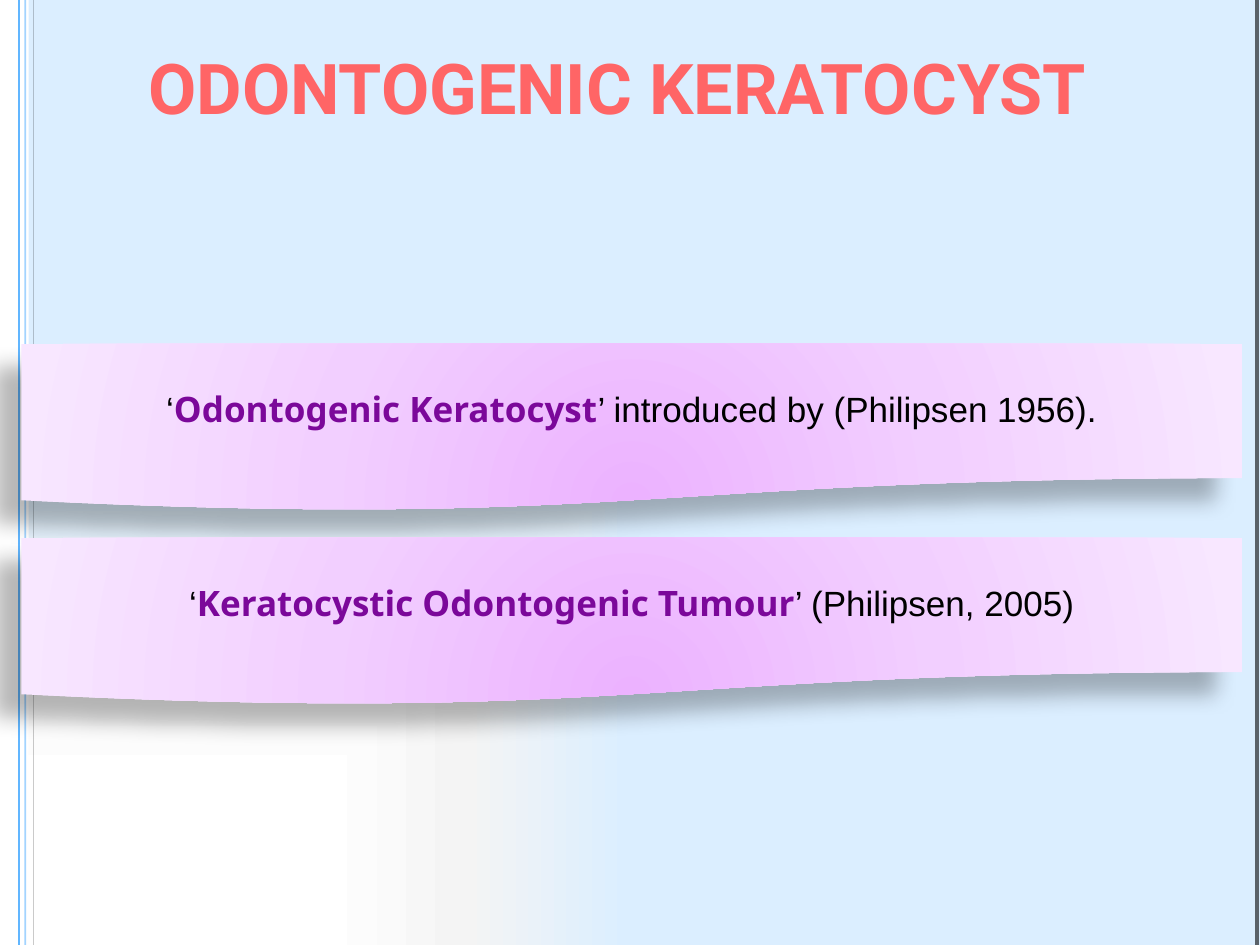
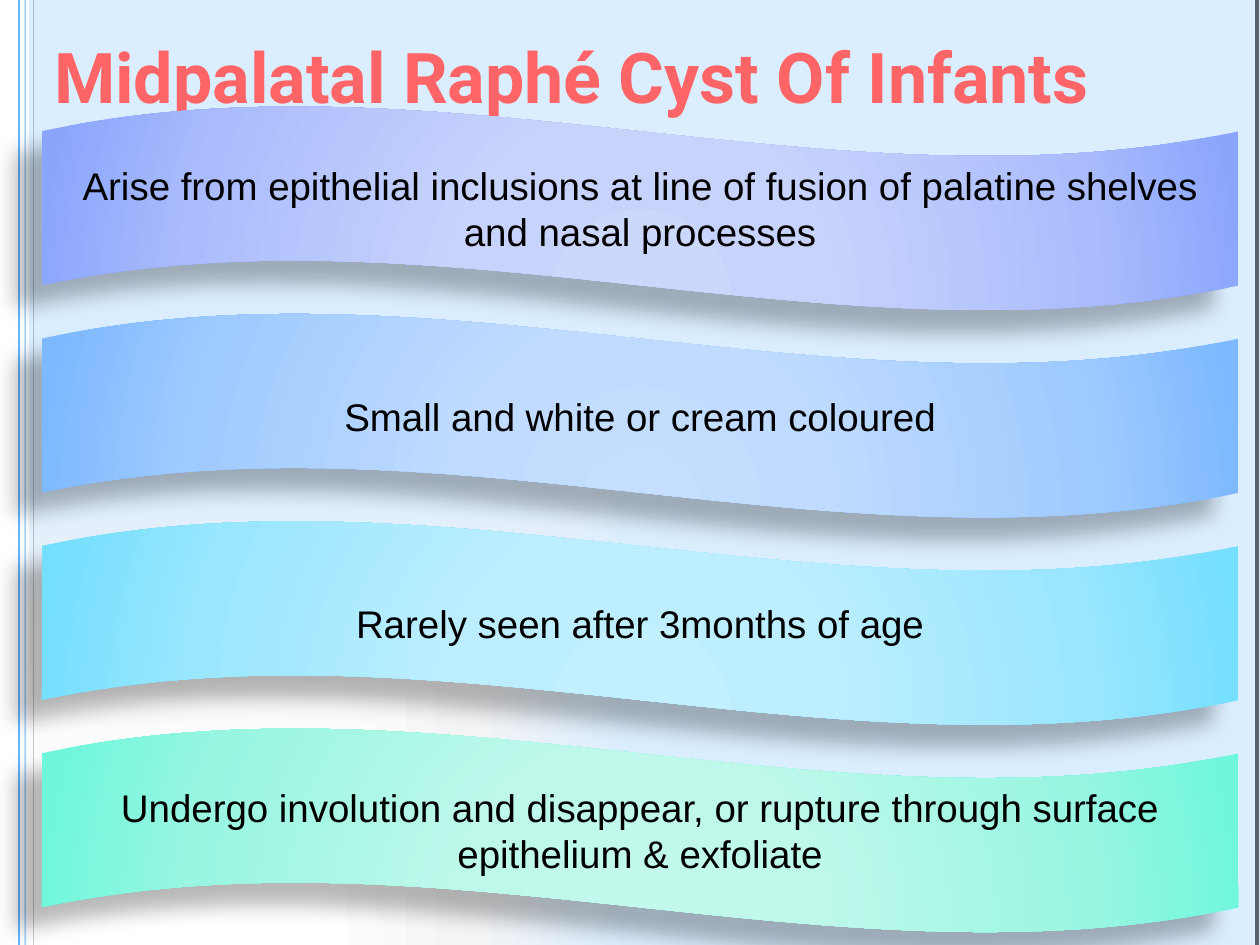
"""Build two slides on jaw cysts, with ribbon bands on a shared layout."""
from dataclasses import dataclass

from lxml import etree
from pptx import Presentation
from pptx.dml.color import RGBColor
from pptx.enum.shapes import MSO_CONNECTOR, MSO_SHAPE
from pptx.enum.text import MSO_ANCHOR, MSO_AUTO_SIZE, PP_ALIGN
from pptx.oxml.ns import qn
from pptx.slide import Slide, SlideLayout
from pptx.util import Cm, Pt

RECT = MSO_SHAPE.RECTANGLE
SCROLL = MSO_SHAPE.FLOWCHART_DOCUMENT
WAVE = MSO_SHAPE.WAVE
LINE = MSO_CONNECTOR.STRAIGHT
TOP, MIDDLE = MSO_ANCHOR.TOP, MSO_ANCHOR.MIDDLE
LEFT, CENTER = PP_ALIGN.LEFT, PP_ALIGN.CENTER
FIXED = MSO_AUTO_SIZE.NONE

Stops = tuple[tuple[int, str], ...]
Sides = tuple[int, int, int, int]


@dataclass(frozen=True)
class Theme:
    """Hold the colours, fonts and type sizes of the deck."""
    white: str = "FFFFFF"
    black: str = "000000"
    blue: str = "61B6FF"
    coral: str = "FF6566"
    plum: str = "7B089A"
    head: str = "Roboto"
    body: str = "Arial"
    bold: str = "Noto Sans"
    large: float = 40
    medium: float = 22
    small: float = 20
    back: Stops = ((34, "FFFFFF"), (65, "F4F4F4"), (100, "DBEEFF"))
    pink: Stops = ((0, "ECB2FF"), (50, "F2CFFF"), (100, "F8E7FF"))
    corner: Sides = (0, 100, 100, 0)
    glow: Sides = (50, 100, 50, 10)


@dataclass(frozen=True)
class Rail:
    """Describe one vertical line of the layout."""
    x: float
    color: str
    width: float
    alpha: int = 100


@dataclass(frozen=True)
class Words:
    """Describe one run of text."""
    text: str
    strong: bool = False


@dataclass(frozen=True)
class Band:
    """Describe one ribbon and its words."""
    words: tuple[Words, ...]
    stops: Stops


@dataclass(frozen=True)
class Stack:
    """Describe a column of equal ribbons, in centimetres and points."""
    kind: MSO_SHAPE
    left: float
    top: float
    width: float
    height: float
    step: float
    drop: float
    depth: float
    inset: float
    size: float
    space: float
    bands: tuple[Band, ...]


@dataclass(frozen=True)
class Page:
    """Describe one slide: its title, the title box and the ribbons."""
    title: str
    box: tuple[float, float, float, float]
    stack: Stack


THEME = Theme()
WIDE, HIGH = 25.4, 19.05
RAILS = (
    Rail(0.38, THEME.blue, 1),
    Rail(0.51, THEME.blue, 1, 59),
    Rail(0.68, THEME.black, 0.25, 59),
    Rail(25.34, THEME.black, 2.25, 59),
)


def ramp(*colors: str) -> Stops:
    """Pair four colours with the shared stop places."""
    return tuple(zip((0, 30, 75, 100), colors))


NAMES = (
    Band((Words("‘"), Words("Odontogenic Keratocyst", True),
          Words("’ introduced by (Philipsen 1956).")), THEME.pink),
    Band((Words("‘"), Words("Keratocystic Odontogenic Tumour", True),
          Words("’ (Philipsen, 2005)")), THEME.pink),
)
FACTS = (
    Band((Words("Arise from epithelial inclusions at line of fusion of "
                "palatine shelves and nasal processes"),),
         ramp("CCD7FC", "C8D3FC", "AABCFC", "8BA5FD")),
    Band((Words("Small and white or cream coloured"),),
         ramp("C6DEFF", "C0DBFF", "9FCAFF", "7DB9FF")),
    Band((Words("Rarely seen after 3months of age"),),
         ramp("C2F0FF", "BDEEFF", "99E6FF", "74DFFF")),
    Band((Words("Undergo involution and disappear, or rupture through "
                "surface epithelium & exfoliate"),),
         ramp("C3F8EC", "BDF8EB", "98F6E1", "6EF7DB")),
)
PAGES = (
    Page("ODONTOGENIC KERATOCYST", (2.74, 0.64, 21.59, 2.54),
         Stack(SCROLL, 0.43, 6.93, 24.61, 3.38, 3.91, 0, 2.72,
               0.2, THEME.small, 0.9, NAMES)),
    Page("Midpalatal Raphé Cyst Of Infants", (0.84, 0.43, 24.56, 2.34),
         Stack(WAVE, 0.84, 2.13, 24.13, 4.14, 4.18, 1.03, 2.08,
               0.23, THEME.medium, 1, FACTS)),
)


def shade(root: etree.ElementBase, stops: Stops, shape: str, to: Sides) -> None:
    """Turn the gradient found under root into a shaped gradient."""
    grad = root.find(".//" + qn("a:gradFill"))
    for child in list(grad):
        grad.remove(child)
    rows = etree.SubElement(grad, qn("a:gsLst"))
    for place, color in stops:
        stop = etree.SubElement(rows, qn("a:gs"), pos=str(place * 1000))
        etree.SubElement(stop, qn("a:srgbClr"), val=color)
    track = etree.SubElement(grad, qn("a:path"), {"path": shape})
    edges = {key: str(side * 1000) for key, side in zip("ltrb", to)}
    etree.SubElement(track, qn("a:fillToRect"), edges)


def fade(color: etree.ElementBase, alpha: int) -> None:
    """Set the opacity of a colour in percent."""
    etree.SubElement(color, qn("a:alpha"), val=str(alpha * 1000))


def cast(root: etree.ElementBase) -> None:
    """Give a shape the soft shadow of the ribbons."""
    effects = root.spPr.find(qn("a:effectLst"))
    shadow = etree.SubElement(
        effects, qn("a:outerShdw"), blurRad=str(int(Pt(11.8))),
        dist=str(int(Pt(19.7))), dir=str(141 * 60000), algn="ctr",
        rotWithShape="0")
    fade(etree.SubElement(shadow, qn("a:srgbClr"), val=THEME.black), 28)


def write(para, text: str, font: str, size: float, color: str,
          bold: bool) -> None:
    """Add one styled run to a paragraph."""
    run = para.add_run()
    run.text = text
    run.font.name = font
    run.font.size = Pt(size)
    run.font.bold = bold
    run.font.color.rgb = RGBColor.from_string(color)


def pad(frame, inset: float) -> None:
    """Set the wrap and the four insets of a text frame."""
    frame.word_wrap = True
    frame.auto_size = FIXED
    frame.margin_left = frame.margin_right = Cm(inset)
    frame.margin_top = frame.margin_bottom = Cm(inset)


def dress(layout: SlideLayout, slide: Slide) -> None:
    """Put the background, the margin and the rails on the layout."""
    for holder in list(layout.placeholders)[1:]:
        holder.element.getparent().remove(holder.element)
    layout.background.fill.gradient()
    shade(layout.element, THEME.back, "rect", THEME.corner)

    strip = slide.shapes.add_shape(RECT, 0, 0, Cm(0.58), Cm(HIGH))
    strip.shadow.inherit = False
    strip.fill.solid()
    strip.fill.fore_color.rgb = RGBColor.from_string(THEME.white)
    strip.line.fill.background()
    items = [strip]
    for rail in RAILS:
        line = slide.shapes.add_connector(
            LINE, Cm(rail.x), 0, Cm(rail.x), Cm(HIGH))
        line.line.width = Pt(rail.width)
        line.line.color.rgb = RGBColor.from_string(rail.color)
        if rail.alpha < 100:
            fade(line.element.spPr.find(".//" + qn("a:srgbClr")), rail.alpha)
        etree.SubElement(line.element.spPr, qn("a:effectLst"))
        items.append(line)
    for place, item in enumerate(items, 2):
        layout.shapes.element.insert(place, item.element)


def head(slide: Slide, page: Page) -> None:
    """Place and fill the title."""
    title = slide.shapes.title
    title.left, title.top, title.width, title.height = map(Cm, page.box)
    frame = title.text_frame
    pad(frame, 0.25)
    frame.vertical_anchor = TOP
    para = frame.paragraphs[0]
    para.alignment = LEFT
    write(para, page.title, THEME.head, THEME.large, THEME.coral, True)


def ribbon(slide: Slide, stack: Stack, band: Band, top: float) -> None:
    """Draw one ribbon with its text over it."""
    left, width = Cm(stack.left), Cm(stack.width)
    shape = slide.shapes.add_shape(
        stack.kind, left, Cm(top), width, Cm(stack.height))
    shape.shadow.inherit = False
    shape.fill.gradient()
    shade(shape.element, band.stops, "circle", THEME.glow)
    shape.line.fill.background()
    cast(shape.element)

    box = slide.shapes.add_textbox(
        left, Cm(top + stack.drop), width, Cm(stack.depth))
    frame = box.text_frame
    pad(frame, stack.inset)
    frame.vertical_anchor = MIDDLE
    para = frame.paragraphs[0]
    para.alignment = CENTER
    para.line_spacing = float(stack.space)
    for piece in band.words:
        font = THEME.bold if piece.strong else THEME.body
        color = THEME.plum if piece.strong else THEME.black
        write(para, piece.text, font, stack.size, color, piece.strong)


def main() -> None:
    """Build and save the deck."""
    deck = Presentation()
    deck.slide_width, deck.slide_height = Cm(WIDE), Cm(HIGH)
    layout = deck.slide_layouts[5]
    slides = [deck.slides.add_slide(layout) for _ in PAGES]
    dress(layout, slides[0])
    for slide, page in zip(slides, PAGES):
        head(slide, page)
        stack = page.stack
        for row, band in enumerate(stack.bands):
            ribbon(slide, stack, band, stack.top + row * stack.step)
    deck.save("out.pptx")


if __name__ == "__main__":
    main()
